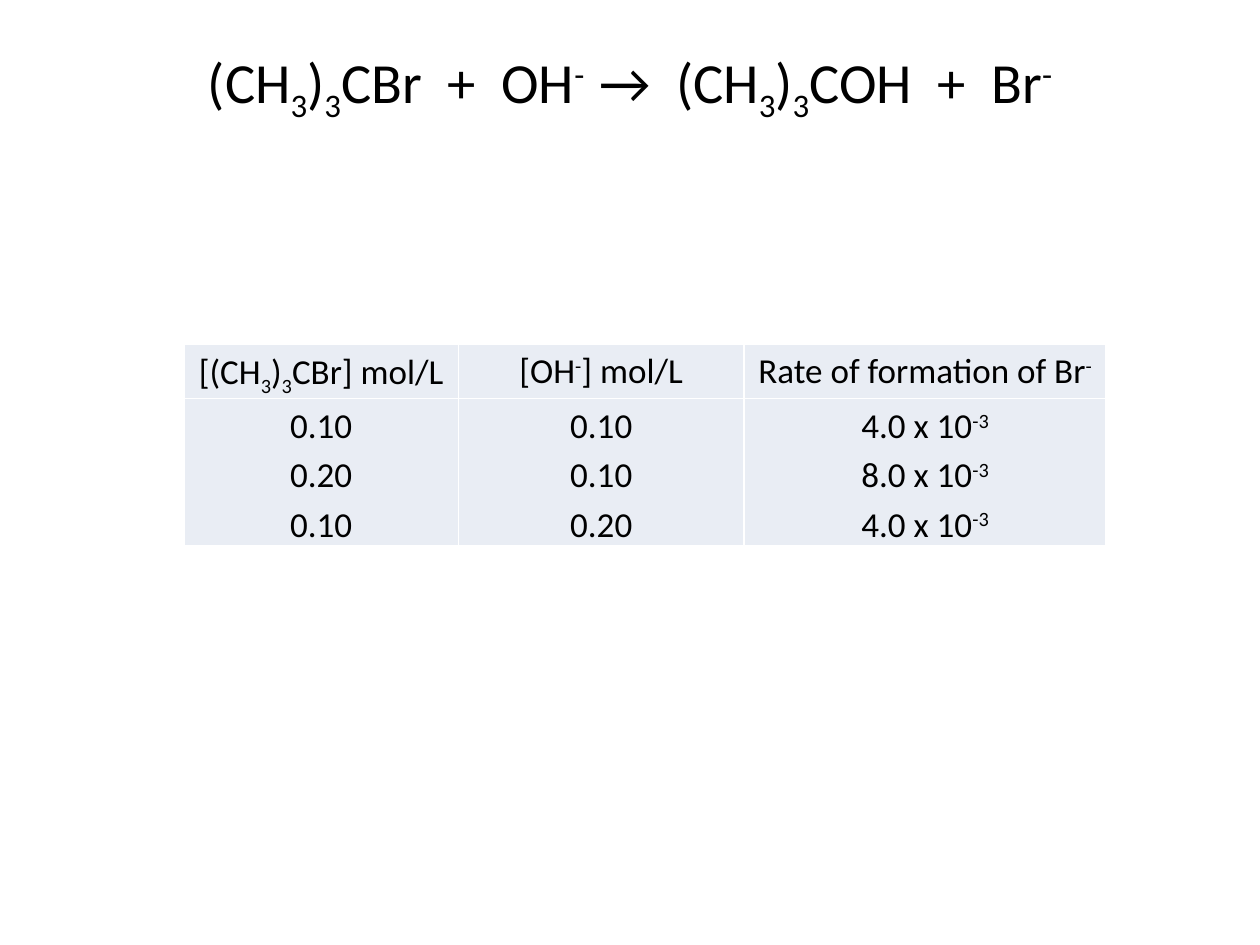
from dataclasses import dataclass

from lxml import etree
from pptx import Presentation
from pptx.dml.color import RGBColor
from pptx.enum import text
from pptx.oxml import ns
from pptx.util import Cm, Pt


@dataclass(frozen=True)
class Theme:
    font: str = "Calibri"
    ink: str = "000000"
    cell: str = "E9EDF4"
    border: str = "FFFFFF"
    title_size: float = 32.4
    table_size: float = 20


THEME = Theme()
BASELINES = {"_": "-25000", "^": "30000"}
EQUATION = "(CH|_3|)|_3|CBr  +  OH|^-  |→  (CH|_3|)|_3|COH  +  Br|^-"
COLUMNS = [
    ("[(CH|_3|)|_3|CBr] mol/L", ["0.10", "0.20", "0.10"], 5.53),
    ("[OH|^-|] mol/L", ["0.10", "0.10", "0.20"], 5.76),
    ("Rate of formation of Br|^-", ["4.0 x 10|^-3", "8.0 x 10|^-3", "4.0 x 10|^-3"], 7.3),
]
ROW_HEIGHTS = (1.09, 2.97)


def write_formula(p, formula, size):
    p.alignment = text.PP_ALIGN.CENTER
    p.font.name = THEME.font
    p.font.size = Pt(size)
    p.font.color.rgb = RGBColor.from_string(THEME.ink)
    for part in formula.split("|"):
        r = p.add_run()
        r.text = part.lstrip("_^")
        if part[0] in BASELINES:
            r.font._element.set("baseline", BASELINES[part[0]])


def add_title(s, left, top, width, height):
    tf = s.shapes.add_textbox(Cm(left), Cm(top), Cm(width), Cm(height)).text_frame
    tf.word_wrap = True
    tf.margin_top = Cm(0.18)
    write_formula(tf.paragraphs[0], EQUATION, THEME.title_size)


def add_borders(cell):
    props = cell._tc.get_or_add_tcPr()
    for i, side in enumerate(("lnL", "lnR", "lnT", "lnB")):
        ln = etree.Element(ns.qn(f"a:{side}"), w=str(Pt(1)))
        fill = etree.SubElement(ln, ns.qn("a:solidFill"))
        etree.SubElement(fill, ns.qn("a:srgbClr"), val=THEME.border)
        props.insert(i, ln)


def fill_cell(cell, lines):
    cell.fill.solid()
    cell.fill.fore_color.rgb = RGBColor.from_string(THEME.cell)
    add_borders(cell)
    cell.margin_left = cell.margin_right = Cm(0.18)
    cell.margin_top = cell.margin_bottom = 0
    tf = cell.text_frame
    for i, line in enumerate(lines):
        p = tf.add_paragraph() if i else tf.paragraphs[0]
        p.line_spacing = 1.15
        write_formula(p, line, THEME.table_size)


def add_rate_table(s, left, top):
    width = sum(column[2] for column in COLUMNS)
    table = s.shapes.add_table(
        len(ROW_HEIGHTS), len(COLUMNS), Cm(left), Cm(top), Cm(width), Cm(sum(ROW_HEIGHTS))
    ).table
    table.first_row = table.horz_banding = False
    for row, height in zip(table.rows, ROW_HEIGHTS):
        row.height = Cm(height)
    for i, (heading, values, column_width) in enumerate(COLUMNS):
        table.columns[i].width = Cm(column_width)
        fill_cell(table.cell(0, i), [heading])
        fill_cell(table.cell(1, i), values)


def main():
    prs = Presentation()
    prs.slide_width, prs.slide_height = Cm(25.4), Cm(19.05)
    s = prs.slides.add_slide(prs.slide_layouts[6])
    add_title(s, 1.27, 0.76, 22.86, 3.18)
    add_rate_table(s, 3.71, 6.93)
    prs.save("out.pptx")


if __name__ == "__main__":
    main()
